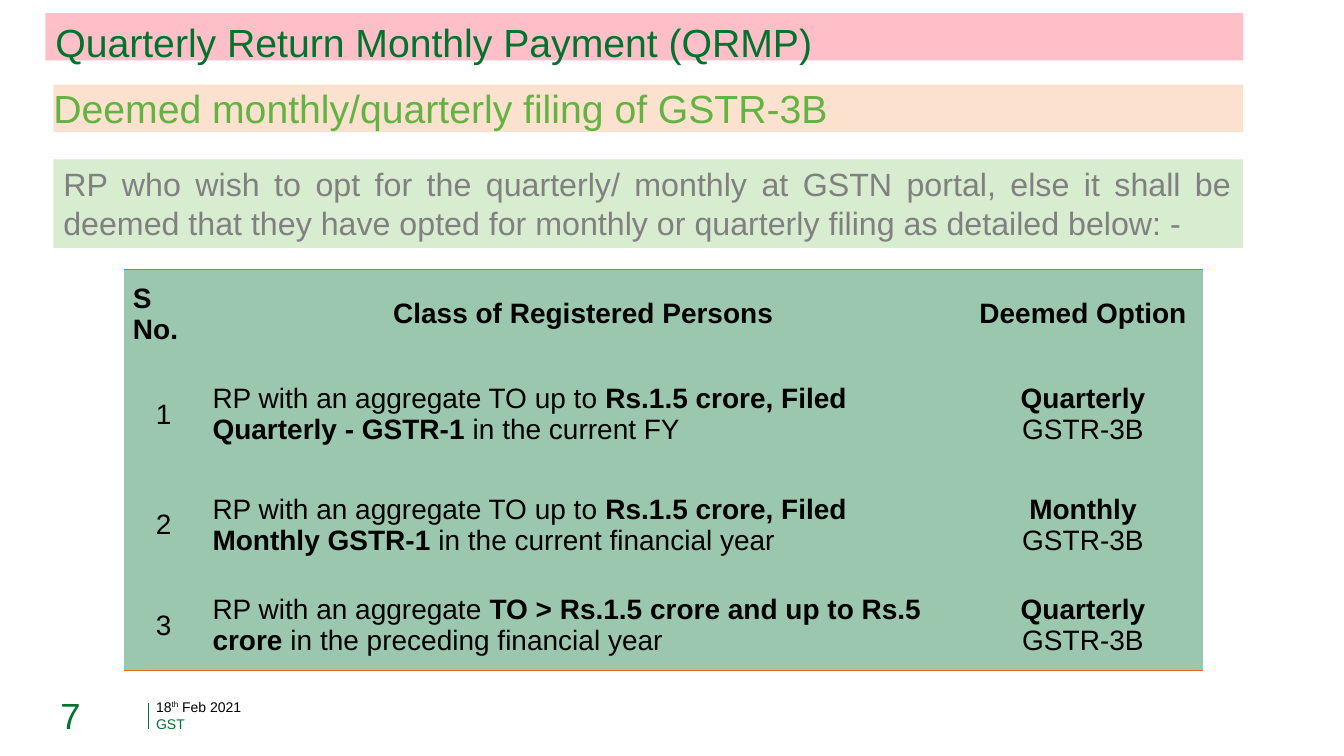
from lxml.etree import SubElement
from pptx import Presentation
from pptx.dml.color import RGBColor
from pptx.enum.shapes import MSO_CONNECTOR, MSO_SHAPE
from pptx.enum.text import MSO_ANCHOR, MSO_AUTO_SIZE, PP_ALIGN
from pptx.oxml import parse_xml
from pptx.oxml.ns import nsdecls, qn
from pptx.util import Inches, Pt

GREEN = "00732D"
BLACK = "000000"
NO_TABLE_STYLE = "{2D5ABB26-0587-4C30-8999-92F81FD0307C}"
COLUMN_WIDTHS = (0.79, 7.54, 2.38)
ROW_HEIGHTS = (0.89, 1.1, 1.1, 0.89)
HEADINGS = ("S No.", "Class of Registered Persons", "Deemed Option")
CLASSES = (
    ("RP with an aggregate TO up to ", "Rs.1.5 crore, Filed Quarterly - GSTR-1 ",
     "in the current FY", "Quarterly"),
    ("RP with an aggregate TO up to ", "Rs.1.5 crore, Filed Monthly GSTR-1 ",
     "in the current financial year", "Monthly"),
    ("RP with an aggregate ", "TO > Rs.1.5 crore and up to Rs.5 crore ",
     "in the preceding financial year", "Quarterly"),
)


def color(value):
    """Turn a hex string into a color."""
    return RGBColor.from_string(value)


def place(shape, left, top, width, height):
    """Move a shape to a box given in inches."""
    shape.left, shape.top = Inches(left), Inches(top)
    shape.width, shape.height = Inches(width), Inches(height)


def fill_band(shape, fill):
    """Give a shape a solid fill and no outline."""
    shape.fill.solid()
    shape.fill.fore_color.rgb = color(fill)
    shape.line.fill.background()


def set_frame(frame, anchor=MSO_ANCHOR.TOP, inset=None):
    """Wrap a text frame, fix its anchor and optionally its insets."""
    frame.word_wrap = True
    frame.auto_size = MSO_AUTO_SIZE.NONE
    frame.vertical_anchor = anchor
    if inset is not None:
        frame.margin_left = frame.margin_right = Inches(inset)
        frame.margin_top = frame.margin_bottom = Inches(inset)


def set_font(paragraph, size, font_color, alignment=PP_ALIGN.LEFT):
    """Format a whole paragraph."""
    paragraph.alignment = alignment
    paragraph.font.name = "Arial"
    paragraph.font.size = Pt(size)
    paragraph.font.color.rgb = color(font_color)


def add_title(slide, left, top, width, height):
    """Fill the title band."""
    title = slide.shapes.title
    place(title, left, top, width, height)
    fill_band(title, "FFBFC9")
    set_frame(title.text_frame)
    title.text_frame.text = "Quarterly Return Monthly Payment (QRMP)"
    set_font(title.text_frame.paragraphs[0], 28, GREEN)


def add_subtitle(slide, left, top, width, height):
    """Fill the body placeholder as the subtitle band."""
    body = slide.placeholders[1]
    place(body, left, top, width, height)
    fill_band(body, "FCE1CE")
    set_frame(body.text_frame, inset=0)
    body.text_frame.text = "Deemed monthly/quarterly filing of GSTR-3B"
    paragraph = body.text_frame.paragraphs[0]
    paragraph.space_before, paragraph.space_after = Pt(0), Pt(4)
    properties = paragraph._p.get_or_add_pPr()
    properties.set("marL", "0")
    properties.set("indent", "0")
    SubElement(properties, qn("a:buNone"))
    set_font(paragraph, 28, "63B343")


def add_intro(slide, left, top, width, height):
    """Add the justified introduction band."""
    intro = slide.shapes.add_shape(MSO_SHAPE.RECTANGLE, 0, 0, 0, 0)
    place(intro, left, top, width, height)
    intro.shadow.inherit = False
    fill_band(intro, "D8ECD0")
    set_frame(intro.text_frame)
    intro.text_frame.text = (
        "RP who wish to opt for the quarterly/ monthly at GSTN portal, else it shall be "
        "deemed that they have opted for monthly or quarterly filing as detailed below: -")
    set_font(intro.text_frame.paragraphs[0], 23, "808080", PP_ALIGN.JUSTIFY)


def add_border(cell, side):
    """Draw an orange line along one side of a cell."""
    border = parse_xml(
        f'<a:{side} {nsdecls("a")} w="12700"><a:solidFill><a:srgbClr val="EB690F"/>'
        f'</a:solidFill></a:{side}>')
    cell._tc.get_or_add_tcPr().insert(0, border)


def fill_cell(cell, runs, alignment):
    """Write text and bold pairs into a cell."""
    cell.fill.solid()
    cell.fill.fore_color.rgb = color("9AC7AE")
    cell.vertical_anchor = MSO_ANCHOR.MIDDLE
    cell.margin_left = cell.margin_right = Inches(0.09)
    cell.margin_top = cell.margin_bottom = Inches(0.04)
    paragraph = cell.text_frame.paragraphs[0]
    set_font(paragraph, 20, BLACK, alignment)
    for text, bold in runs:
        run = paragraph.add_run()
        run.text = text
        run.font.bold = bold


def add_options_table(slide, left, top, width, height):
    """Add the table of deemed filing options."""
    table = slide.shapes.add_table(
        len(ROW_HEIGHTS), len(COLUMN_WIDTHS),
        Inches(left), Inches(top), Inches(width), Inches(height)).table
    table.first_row = table.horz_banding = False
    table._tbl.tblPr.find(qn("a:tableStyleId")).text = NO_TABLE_STYLE
    for column, column_width in zip(table.columns, COLUMN_WIDTHS):
        column.width = Inches(column_width)
    for row, row_height in zip(table.rows, ROW_HEIGHTS):
        row.height = Inches(row_height)

    rows = [[[(heading, True)] for heading in HEADINGS]]
    for number, (start, limit, period, option) in enumerate(CLASSES, 1):
        rows.append([
            [(str(number), False)],
            [(start, False), (limit, True), (period, False)],
            [(option, True), (" GSTR-3B", False)],
        ])
    for row_index, row in enumerate(rows):
        for column_index, runs in enumerate(row):
            cell = table.cell(row_index, column_index)
            left_aligned = (row_index == 0) == (column_index == 0) and column_index < 2
            fill_cell(cell, runs, PP_ALIGN.LEFT if left_aligned else PP_ALIGN.CENTER)
            if row_index == 0:
                add_border(cell, "lnT")
            if row_index == len(rows) - 1:
                add_border(cell, "lnB")


def add_footer_text(slide, box, runs, size, font_color, anchor):
    """Add one footer text from text and superscript pairs."""
    text_box = slide.shapes.add_textbox(0, 0, 0, 0)
    place(text_box, *box)
    set_frame(text_box.text_frame, anchor, 0)
    paragraph = text_box.text_frame.paragraphs[0]
    set_font(paragraph, size, font_color)
    for text, superscript in runs:
        run = paragraph.add_run()
        run.text = text
        if superscript:
            run.font._element.set("baseline", "30000")


def add_footer(slide, left, top):
    """Add the page number, divider, date and topic."""
    add_footer_text(slide, (left, top, 0.87, 0.38), [("7", False)], 26, GREEN,
                    MSO_ANCHOR.BOTTOM)
    add_footer_text(slide, (left + 0.95, top, 2.84, 0.16),
                    [("18", False), ("th", True), (" Feb 2021", False)], 10, BLACK,
                    MSO_ANCHOR.MIDDLE)
    add_footer_text(slide, (left + 0.95, top + 0.17, 7.01, 0.16), [("GST", False)], 10,
                    GREEN, MSO_ANCHOR.MIDDLE)
    divider = slide.shapes.add_connector(
        MSO_CONNECTOR.STRAIGHT, Inches(left + 0.87), Inches(top + 0.04),
        Inches(left + 0.87), Inches(top + 0.3))
    divider.line.color.rgb = color(GREEN)
    divider.line.width = Pt(0.5)
    SubElement(divider._element.spPr, qn("a:effectLst"))


def main():
    """Build the slide and save it."""
    presentation = Presentation()
    presentation.slide_width, presentation.slide_height = Inches(13.34), Inches(7.5)
    slide = presentation.slides.add_slide(presentation.slide_layouts[1])
    add_title(slide, 0.45, 0.13, 11.89, 0.47)
    add_subtitle(slide, 0.53, 0.84, 11.81, 0.47)
    add_intro(slide, 0.53, 1.58, 11.81, 0.88)
    add_options_table(slide, 1.23, 2.67, sum(COLUMN_WIDTHS), sum(ROW_HEIGHTS))
    add_footer(slide, 0.6, 6.93)
    presentation.save("out.pptx")


if __name__ == "__main__":
    main()
